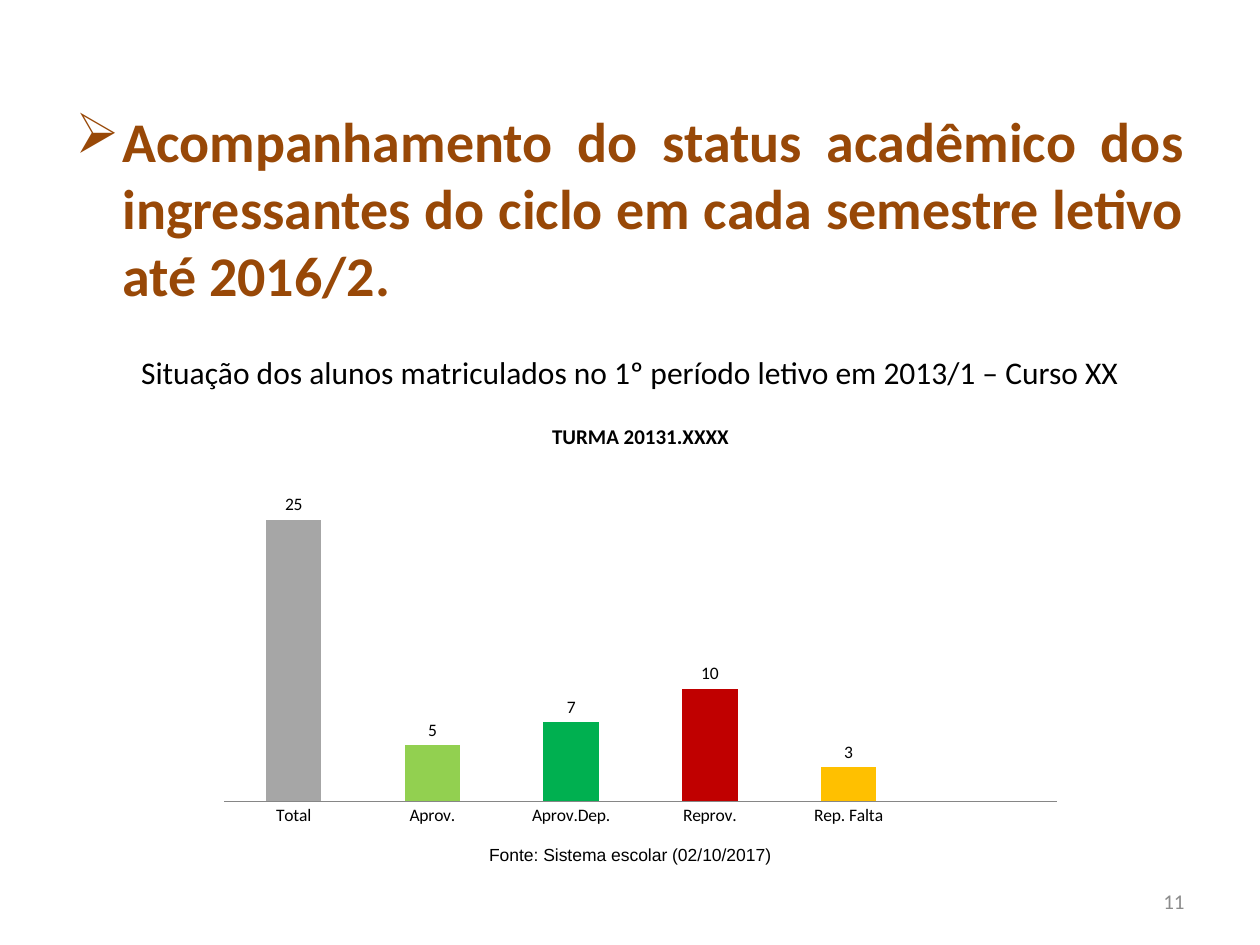
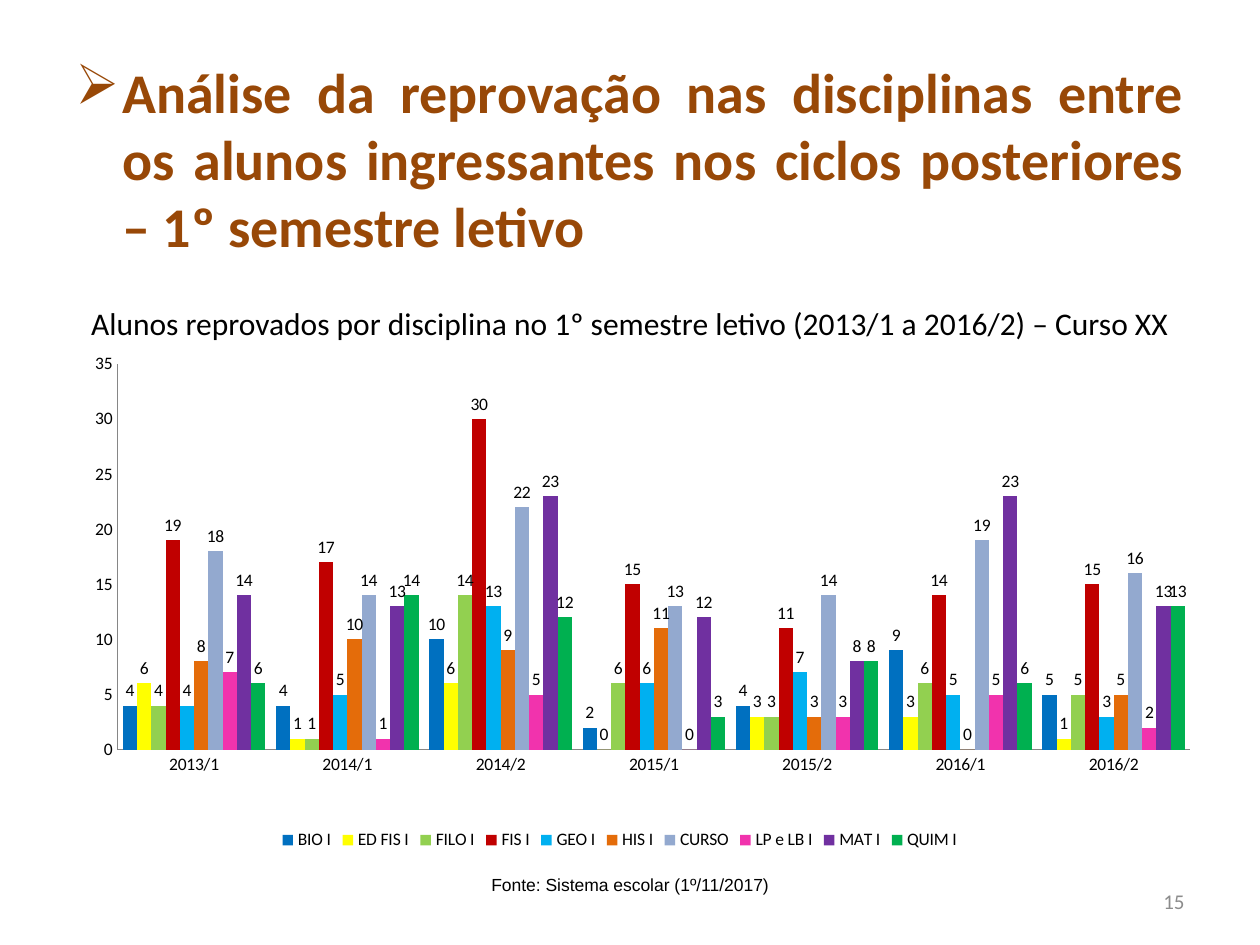
from lxml import etree
from pptx import Presentation
from pptx.chart.data import CategoryChartData
from pptx.dml.color import RGBColor
from pptx.enum.chart import XL_CHART_TYPE, XL_LABEL_POSITION, XL_LEGEND_POSITION, XL_TICK_MARK
from pptx.enum.text import MSO_ANCHOR, PP_ALIGN
from pptx.oxml.ns import qn
from pptx.util import Emu, Pt

COLUMNS = XL_CHART_TYPE.COLUMN_CLUSTERED
OUTSIDE = XL_LABEL_POSITION.OUTSIDE_END
LEGEND_BOTTOM = XL_LEGEND_POSITION.BOTTOM
NO_TICKS = XL_TICK_MARK.NONE
TOP, MIDDLE = MSO_ANCHOR.TOP, MSO_ANCHOR.MIDDLE
CENTER, RIGHT, JUSTIFY = PP_ALIGN.CENTER, PP_ALIGN.RIGHT, PP_ALIGN.JUSTIFY

BROWN, BLACK, GRAY, AXIS_GRAY = "984807", "000000", "8C8C8C", "868686"
HEADING_INDENT = 47

STATUS_COUNTS = {
    "Total": (25, "A6A6A6"),
    "Aprov.": (5, "92D050"),
    "Aprov.Dep.": (7, "00B050"),
    "Reprov.": (10, "C00000"),
    "Rep. Falta": (3, "FFC000"),
}
SEMESTERS = ["2013/1", "2014/1", "2014/2", "2015/1", "2015/2", "2016/1", "2016/2"]
FAILURES = {
    "BIO I": ([4, 4, 10, 2, 4, 9, 5], "0070C0"),
    "ED FIS I": ([6, 1, 6, 0, 3, 3, 1], "FFFF00"),
    "FILO I": ([4, 1, 14, 6, 3, 6, 5], "92D050"),
    "FIS I": ([19, 17, 30, 15, 11, 14, 15], "C00000"),
    "GEO I": ([4, 5, 13, 6, 7, 5, 3], "00B0F0"),
    "HIS I": ([8, 10, 9, 11, 3, 0, 5], "E46C0A"),
    "CURSO": ([18, 14, 22, 13, 14, 19, 16], "93A9CF"),
    "LP e LB I": ([7, 1, 5, 0, 3, 5, 2], "F133AD"),
    "MAT I": ([14, 13, 23, 12, 8, 23, 13], "7030A0"),
    "QUIM I": ([6, 14, 12, 3, 8, 6, 13], "00B050"),
}


def px(length):
    """Turn px into EMU."""
    return Emu(round(length * 914400 / 126))


def rgb(color):
    """Turn a hex string into a colour."""
    return RGBColor.from_string(color)


def set_font(font, size, color, name="Calibri", bold=False):
    """Set the look of a font."""
    font.name, font.size, font.bold = name, Pt(size), bold
    font.color.rgb = rgb(color)


def fill_solid(fill, color):
    """Fill with one colour."""
    fill.solid()
    fill.fore_color.rgb = rgb(color)


def add_text_frame(slide, left, top, width, height, anchor):
    """Add a wrapping text box and return its text frame."""
    frame = slide.shapes.add_textbox(px(left), px(top), px(width), px(height)).text_frame
    frame.word_wrap = True
    frame.vertical_anchor = anchor
    return frame


def write(paragraph, text, align, size, color, **look):
    """Write a paragraph in one style."""
    paragraph.text = text
    paragraph.alignment = align
    set_font(paragraph.font, size, color, **look)


def add_arrow_bullet(paragraph):
    """Give a paragraph a hanging arrow bullet."""
    properties = paragraph._p.get_or_add_pPr()
    properties.set("marL", str(px(HEADING_INDENT)))
    properties.set("indent", str(-px(HEADING_INDENT)))
    bullet = etree.Element(qn("a:buChar"), char="➢")
    properties.insert_element_before(bullet, "a:tabLst", "a:defRPr", "a:extLst")


def add_heading(slide, top, heading, chart_caption):
    """Add the bulleted heading and the caption of the chart."""
    frame = add_text_frame(slide, 63, top, 1134, 300, TOP)
    write(frame.paragraphs[0], heading, JUSTIFY, 32, BROWN, bold=True)
    add_arrow_bullet(frame.paragraphs[0])
    caption = frame.add_paragraph()
    write(caption, chart_caption, CENTER, 18, BLACK)
    caption.space_before = Pt(26)


def add_footer(slide, source_top, source, number):
    """Add the data source and the page number."""
    frame = add_text_frame(slide, 0, source_top, 1260, 34, MIDDLE)
    write(frame.paragraphs[0], source, CENTER, 10, BLACK, name="Arial")
    frame = add_text_frame(slide, 903, 876, 294, 50, MIDDLE)
    write(frame.paragraphs[0], number, RIGHT, 12, GRAY)


def place_plot(chart, x, y, w, h):
    """Fix the inner plot area as fractions of the chart."""
    plot_area = chart.element.find(".//" + qn("c:plotArea"))
    for old_layout in plot_area.findall(qn("c:layout")):
        plot_area.remove(old_layout)
    layout = etree.Element(qn("c:layout"))
    plot_area.insert(0, layout)
    manual = etree.SubElement(layout, qn("c:manualLayout"))
    settings = {"layoutTarget": "inner", "xMode": "edge", "yMode": "edge",
                "x": x, "y": y, "w": w, "h": h}
    for tag, value in settings.items():
        etree.SubElement(manual, qn("c:" + tag), val=str(value))


def add_column_chart(slide, box, categories, series_values, maximum, gap, overlap, plot_box):
    """Add a labelled column chart without gridlines."""
    data = CategoryChartData()
    data.categories = categories
    for name, values in series_values.items():
        data.add_series(name, values)
    chart = slide.shapes.add_chart(COLUMNS, *map(px, box), data).chart
    set_font(chart.font, 10, BLACK)
    chart.has_title = chart.has_legend = False
    plot = chart.plots[0]
    plot.gap_width, plot.overlap = gap, overlap
    plot.vary_by_categories = False
    plot.has_data_labels = True
    plot.data_labels.show_value = True
    plot.data_labels.position = OUTSIDE
    for series in plot.series:
        series.invert_if_negative = False
    for axis in (chart.category_axis, chart.value_axis):
        axis.major_tick_mark = axis.minor_tick_mark = NO_TICKS
        axis.has_major_gridlines = False
        axis.format.line.color.rgb = rgb(AXIS_GRAY)
    chart.value_axis.minimum_scale, chart.value_axis.maximum_scale = 0, maximum
    chart.value_axis.major_unit = 5
    place_plot(chart, *plot_box)
    return chart


def add_status_chart(slide):
    """Add the chart of students by status, one colour a column."""
    values = [count for count, _ in STATUS_COUNTS.values()]
    chart = add_column_chart(slide, (207, 403, 867, 433), [*STATUS_COUNTS, ""],
                             {"Alunos": [*values, None]}, 30, 150, -25,
                             (0.02, 0.14, 0.96, 0.78))
    chart.value_axis.visible = False
    chart.has_title = True
    title = chart.chart_title.text_frame.paragraphs[0]
    title.text = "TURMA 20131.XXXX"
    set_font(title.font, 12, BLACK, bold=True)
    points = chart.plots[0].series[0].points
    for index, (_, color) in enumerate(STATUS_COUNTS.values()):
        fill_solid(points[index].format.fill, color)


def add_failures_chart(slide):
    """Add the chart of failures by subject and semester."""
    subjects = {name: values for name, (values, _) in FAILURES.items()}
    chart = add_column_chart(slide, (49, 354, 1142, 501), SEMESTERS, subjects,
                             35, 75, 0, (0.06, 0.02, 0.94, 0.77))
    for series in chart.plots[0].series:
        fill_solid(series.format.fill, FAILURES[series.name][1])
    chart.has_legend = True
    chart.legend.position = LEGEND_BOTTOM
    chart.legend.include_in_layout = False


def main():
    """Build and save the presentation."""
    presentation = Presentation()
    presentation.slide_width, presentation.slide_height = px(1260), px(945)
    blank = presentation.slide_layouts[6]

    slide = presentation.slides.add_slide(blank)
    add_heading(slide, 100,
                "Acompanhamento do status acadêmico dos ingressantes do ciclo "
                "em cada semestre letivo até 2016/2.",
                "Situação dos alunos matriculados no 1º período letivo em 2013/1 – Curso XX")
    add_status_chart(slide)
    add_footer(slide, 837, "Fonte: Sistema escolar (02/10/2017)", "11")

    slide = presentation.slides.add_slide(blank)
    add_heading(slide, 51,
                "Análise da reprovação nas disciplinas entre os alunos ingressantes "
                "nos ciclos posteriores – 1º semestre letivo",
                "Alunos reprovados por disciplina no 1º semestre letivo "
                "(2013/1 a 2016/2) – Curso XX")
    add_failures_chart(slide)
    add_footer(slide, 867, "Fonte: Sistema escolar (1º/11/2017)", "15")

    presentation.save("out.pptx")


if __name__ == "__main__":
    main()
